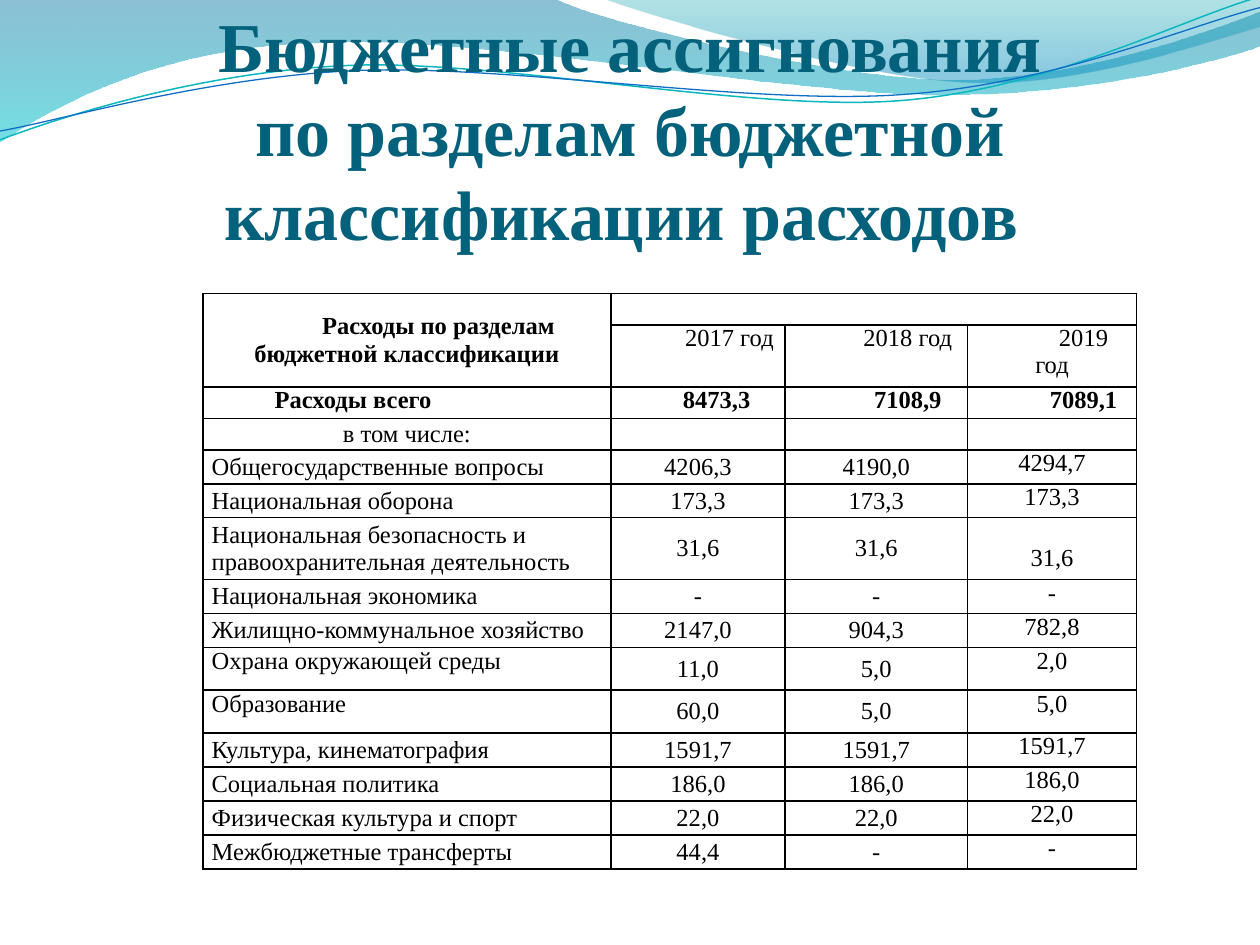
from dataclasses import dataclass
from math import cos, radians, sin

import pptx
import pptx.dml.color
import pptx.enum.text
import pptx.oxml
import pptx.oxml.ns
import pptx.util

Inches = pptx.util.Inches
Pt = pptx.util.Pt
RGB = pptx.dml.color.RGBColor.from_string
Align = pptx.enum.text.PP_ALIGN
Anchor = pptx.enum.text.MSO_ANCHOR
qn = pptx.oxml.ns.qn
NAMESPACE = pptx.oxml.ns.nsdecls("a")


@dataclass(frozen=True)
class Theme:
    font: str = "Times New Roman"
    title_size: float = 40
    table_size: float = 14
    title_color: str = "04617B"
    ink: str = "000000"
    border: float = 1


@dataclass(frozen=True)
class Stop:
    position: float
    color: str
    opacity: int


@dataclass(frozen=True)
class Wave:
    box: tuple  # left, top, width, height
    start: tuple
    segments: list  # two numbers make a line, six a Bézier curve
    stops: tuple = ()
    line: tuple = ()
    rotation: float = 0


@dataclass(frozen=True)
class CellStyle:
    align: Align = Align.CENTER
    anchor: Anchor = Anchor.MIDDLE
    bold: bool = False
    indent: float = 0
    top: float = 0


@dataclass(frozen=True)
class Row:
    height: float
    texts: tuple
    styles: tuple


THEME = Theme()

WAVES = [
    Wave((-0.01, -0.01, 10.02, 1.14), (0, 0),
         [(4.4, -0.01), (4.76, 0.17, 6.64, 0.63, 7.58, 0.63),
          (8.53, 0.63, 9.58, 0.26, 10, 0.09), (10.01, 0.36),
          (9.83, 0.44, 8.7, 0.76, 7.46, 0.75), (6.22, 0.75, 3.82, 0.28, 2.57, 0.34),
          (1.29, 0.36, 0.46, 0.83, -0.01, 1.13), (0, 0)],
         stops=(Stop(0, "0074A1", 45), Stop(1, "00C6CF", 55))),
    Wave((4.79, -0.01, 5.21, 0.7), (4.79, -0.01),
         [(5.09, 0.11, 6.82, 0.62, 7.69, 0.65), (8.56, 0.69, 9.61, 0.32, 10, 0.21),
          (10, 0), (4.79, -0.01)],
         stops=(Stop(0, "00A1A9", 30), Stop(0.8, "008BBF", 45))),
    Wave((-0.02, 0.22, 10.02, 0.71), (0, 1.11),
         [(0.48, 0.93, 1.58, 0.57, 2.77, 0.52), (3.95, 0.47, 5.93, 0.89, 7.13, 0.8),
          (8.33, 0.71, 9.38, 0.15, 9.98, -0.02)],
         line=("0AB8BF", 0.85), rotation=357.3),
    Wave((-0.02, 0.3, 10.03, 0.58), (0, 1.04),
         [(0.47, 0.96, 1.64, 0.61, 2.83, 0.56), (4.03, 0.51, 5.97, 0.84, 7.17, 0.75),
          (8.36, 0.67, 9.41, 0.21, 10, 0.06)],
         line=("0F6FC6", 0.75), rotation=357.3),
]

# Cell styles
MIDDLE = CellStyle()
TOP = CellStyle(anchor=Anchor.TOP)
LOWERED = CellStyle(anchor=Anchor.TOP, top=0.21)
LABEL = CellStyle(align=Align.LEFT)
TOP_LABEL = CellStyle(align=Align.LEFT, anchor=Anchor.TOP)
HEAD = CellStyle(bold=True, indent=0.5)
YEAR = CellStyle(anchor=Anchor.TOP, indent=0.5)
TOTAL = CellStyle(anchor=Anchor.TOP, bold=True, indent=0.5)
TOTAL_LEFT = CellStyle(Align.LEFT, Anchor.TOP, True, 0.5)


def section(label: str, *values: str, height: float = 0.27,
            first: CellStyle = LABEL, last: CellStyle = TOP) -> Row:
    return Row(height, (label, *values), (first, MIDDLE, MIDDLE, last))


COLUMNS = (3.24, 1.38, 1.45, 1.34)
ROWS = [
    Row(0.25, ("Расходы по разделам бюджетной классификации", "", "", ""), (HEAD, TOP, TOP, TOP)),
    Row(0.49, ("", "2017 год", "2018 год", "2019 год"), (TOP, YEAR, YEAR, YEAR)),
    Row(0.25, ("Расходы всего", "8473,3", "7108,9", "7089,1"),
        (TOTAL_LEFT, TOTAL_LEFT, TOTAL, TOTAL)),
    Row(0.25, ("в том числе:", "", "", ""), (MIDDLE, TOP, TOP, TOP)),
    section("Общегосударственные вопросы", "4206,3", "4190,0", "4294,7"),
    section("Национальная оборона", "173,3", "173,3", "173,3"),
    section("Национальная безопасность и правоохранительная деятельность",
            "31,6", "31,6", "31,6", height=0.49, last=LOWERED),
    section("Национальная экономика", "-", "-", "-"),
    section("Жилищно-коммунальное хозяйство", "2147,0", "904,3", "782,8"),
    section("Охрана окружающей среды", "11,0", "5,0", "2,0", height=0.34, first=TOP_LABEL),
    section("Образование", "60,0", "5,0", "5,0", height=0.34, first=TOP_LABEL),
    section("Культура, кинематография", "1591,7", "1591,7", "1591,7"),
    section("Социальная политика", "186,0", "186,0", "186,0"),
    section("Физическая культура и спорт", "22,0", "22,0", "22,0"),
    section("Межбюджетные трансферты", "44,4", "-", "-"),
]


def apply(target, formats: dict) -> None:
    for name, value in formats.items():
        setattr(target, name, value)


def style_font(font, size: float, color: str, bold: bool) -> None:
    apply(font, {"name": THEME.font, "size": Pt(size), "bold": bold})
    font.color.rgb = RGB(color)


def local_point(wave: Wave, x: float, y: float) -> tuple:
    """Turn a point on the page into one inside the wave's unrotated box."""
    left, top, width, height = wave.box
    dx, dy = x - left - width / 2, y - top - height / 2
    angle = radians(-wave.rotation)
    return (Inches(dx * cos(angle) - dy * sin(angle) + width / 2),
            Inches(dx * sin(angle) + dy * cos(angle) + height / 2))


def draw_wave(page, wave: Wave) -> None:
    builder = page.shapes.build_freeform(*local_point(wave, *wave.start))
    builder.add_line_segments([local_point(wave, *segment[-2:]) for segment in wave.segments],
                              close=bool(wave.stops))
    shape = builder.convert_to_shape()
    left, top, width, height = map(Inches, wave.box)
    apply(shape, {"left": left, "top": top, "width": width, "height": height,
                  "rotation": wave.rotation})
    shape.shadow.inherit = False
    # Bézier curves in the coordinates of the box
    outline = next(shape._element.iter(qn("a:path")))
    outline.set("w", str(width))
    outline.set("h", str(height))
    steps = [step for step in outline if step.tag != qn("a:close")]
    for step, segment in zip(steps, [wave.start, *wave.segments]):
        points = [local_point(wave, *segment[i:i + 2]) for i in range(0, len(segment), 2)]
        tag = "cubicBezTo" if len(points) == 3 else "moveTo" if step is steps[0] else "lnTo"
        marks = "".join(f'<a:pt x="{x}" y="{y}"/>' for x, y in points)
        outline.replace(step, pptx.oxml.parse_xml(f"<a:{tag} {NAMESPACE}>{marks}</a:{tag}>"))
    if wave.line:
        color, thickness = wave.line
        shape.fill.background()
        shape.line.color.rgb = RGB(color)
        shape.line.width = Pt(thickness)
        return
    shape.line.fill.background()
    shape.fill.gradient()
    shape.fill.gradient_angle = 270
    for target, stop in zip(shape.fill.gradient_stops, wave.stops):
        target.position = stop.position
        target.color.rgb = RGB(stop.color)
    # Transparency of the gradient stops
    for color, stop in zip(shape._element.spPr.iter(qn("a:srgbClr")), wave.stops):
        color.append(pptx.oxml.parse_xml(f'<a:alpha {NAMESPACE} val="{stop.opacity * 1000}"/>'))


def draw_title(page) -> None:
    box = page.shapes.add_textbox(Inches(0.5), Inches(0.77), Inches(9), Inches(1.25))
    apply(box.text_frame, {"word_wrap": True, "vertical_anchor": Anchor.BOTTOM,
                           "margin_left": 0, "margin_right": 0,
                           "margin_top": Inches(0.05), "margin_bottom": 0})
    para = box.text_frame.paragraphs[0]
    para.text = "Бюджетные ассигнования\vпо разделам бюджетной классификации расходов "
    para.alignment = Align.CENTER
    for span in para.runs:
        style_font(span.font, THEME.title_size, THEME.title_color, True)


def fill_cell(cell, text: str, style: CellStyle) -> None:
    apply(cell, {"margin_left": Inches(0.07), "margin_right": Inches(0.07),
                 "margin_top": Inches(style.top), "margin_bottom": 0,
                 "vertical_anchor": style.anchor})
    for side in ("lnL", "lnR", "lnT", "lnB"):
        cell._tc.get_or_add_tcPr().append(pptx.oxml.parse_xml(
            f'<a:{side} {NAMESPACE} w="{Pt(THEME.border)}"><a:solidFill>'
            f'<a:srgbClr val="{THEME.ink}"/></a:solidFill></a:{side}>'))
    cell.fill.background()
    para = cell.text_frame.paragraphs[0]
    para.alignment = style.align
    para._p.get_or_add_pPr().set("indent", str(Inches(style.indent)))
    if text:
        span = para.add_run()
        span.text = text
        style_font(span.font, THEME.table_size, THEME.ink, style.bold)
    else:  # keeps empty rows at their height
        para._p.append(pptx.oxml.parse_xml(
            f'<a:endParaRPr {NAMESPACE} sz="{THEME.table_size * 100}">'
            f'<a:latin typeface="{THEME.font}"/></a:endParaRPr>'))


def draw_table(page) -> None:
    frame = page.shapes.add_table(len(ROWS), len(COLUMNS), Inches(1.61), Inches(2.33),
                                  Inches(sum(COLUMNS)), Inches(sum(row.height for row in ROWS)))
    table = frame.table
    apply(table, {"first_row": False, "horz_banding": False})
    for column, width in zip(table.columns, COLUMNS):
        column.width = Inches(width)
    for line, row in zip(table.rows, ROWS):
        line.height = Inches(row.height)
        for cell, text, style in zip(line.cells, row.texts, row.styles):
            fill_cell(cell, text, style)
    table.cell(0, 0).merge(table.cell(1, 0))
    table.cell(0, 1).merge(table.cell(0, 3))


deck = pptx.Presentation()
apply(deck, {"slide_width": Inches(10), "slide_height": Inches(7.5)})
page = deck.slides.add_slide(deck.slide_layouts[6])
for wave in WAVES:
    draw_wave(page, wave)
draw_title(page)
draw_table(page)
deck.save("out.pptx")
